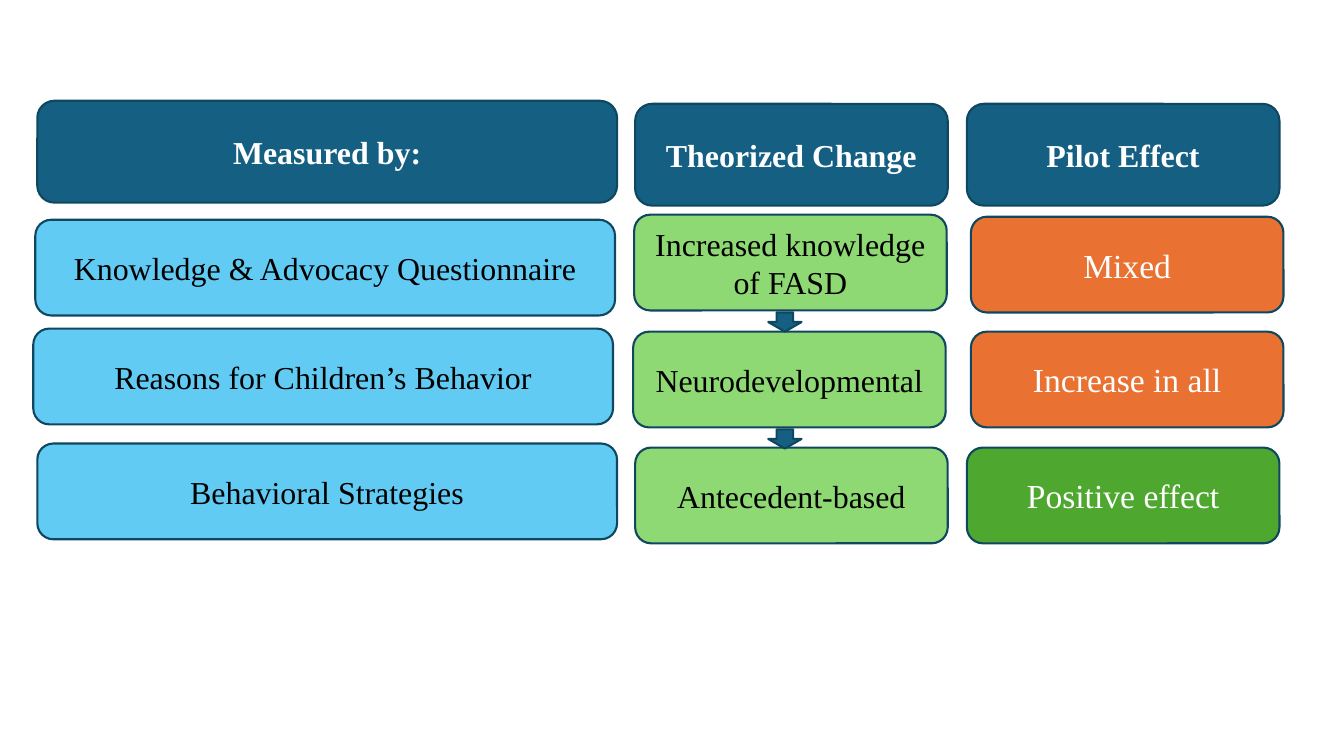
from pptx import Presentation
from pptx.dml.color import RGBColor
from pptx.enum.shapes import MSO_SHAPE
from pptx.enum.text import MSO_ANCHOR, PP_ALIGN
from pptx.util import Inches, Pt

NAVY, EDGE, SKY, LIME = "156082", "104760", "61CBF4", "8ED973"
ORANGE, GREEN, WHITE, BLACK = "E97132", "4EA72E", "FFFFFF", "000000"
HEAD_H, ROW_H = 1.01, 0.95

COLUMNS = [
    dict(width=5.75, size=22.8, color=BLACK,
         head=("Measured by:", 0.37, 1.0),
         rows=[("Knowledge & Advocacy Questionnaire", 0.35, 2.18, SKY),
               ("Reasons for Children’s Behavior", 0.33, 3.26, SKY),
               ("Behavioral Strategies", 0.37, 4.4, SKY)]),
    dict(width=3.1, size=22.8, color=BLACK,
         head=("Theorized Change", 6.3, 1.03),
         rows=[("Increased knowledge of FASD", 6.29, 2.13, LIME),
               ("Neurodevelopmental", 6.28, 3.29, LIME),
               ("Antecedent-based", 6.3, 4.44, LIME)]),
    dict(width=3.1, size=24, color=WHITE,
         head=("Pilot Effect", 9.59, 1.03),
         rows=[("Mixed", 9.63, 2.15, ORANGE),
               ("Increase in all", 9.63, 3.29, ORANGE),
               ("Positive effect", 9.59, 4.44, GREEN)]),
]
ARROW_LEFT, ARROW_W, ARROW_H, ARROW_GAP = 7.62, 0.33, 0.19, 0.02


def rgb(color):
    return RGBColor.from_string(color)


def add_block(s, kind, left, top, width, height, fill):
    sp = s.shapes.add_shape(kind, Inches(left), Inches(top), Inches(width), Inches(height))
    sp.shadow.inherit = False
    sp.fill.solid()
    sp.fill.fore_color.rgb = rgb(fill)
    sp.line.color.rgb = rgb(EDGE)
    sp.line.width = Pt(1.5)
    return sp


def write(sp, text, size=22.8, color=BLACK, bold=False):
    tf = sp.text_frame
    tf.word_wrap = True
    tf.vertical_anchor = MSO_ANCHOR.MIDDLE
    p = tf.paragraphs[0]
    p.alignment = PP_ALIGN.CENTER
    p.space_after = Pt(5.7)
    r = p.add_run()
    r.text = text
    r.font.name = "Times New Roman"
    r.font.size = Pt(size)
    r.font.bold = bold
    r.font.color.rgb = rgb(color)


def main():
    prs = Presentation()
    prs.slide_width, prs.slide_height = Inches(13.33), Inches(7.5)
    s = prs.slides.add_slide(prs.slide_layouts[6])
    for col in COLUMNS:
        text, left, top = col["head"]
        sp = add_block(s, MSO_SHAPE.ROUNDED_RECTANGLE, left, top, col["width"], HEAD_H, NAVY)
        write(sp, text, color=WHITE, bold=True)
        for text, left, top, fill in col["rows"]:
            sp = add_block(s, MSO_SHAPE.ROUNDED_RECTANGLE, left, top, col["width"], ROW_H, fill)
            write(sp, text, size=col["size"], color=col["color"])
    for _, _, top, _ in COLUMNS[1]["rows"][:-1]:
        add_block(s, MSO_SHAPE.DOWN_ARROW, ARROW_LEFT, top + ROW_H + ARROW_GAP,
                  ARROW_W, ARROW_H, NAVY)
    prs.save("out.pptx")


if __name__ == "__main__":
    main()
